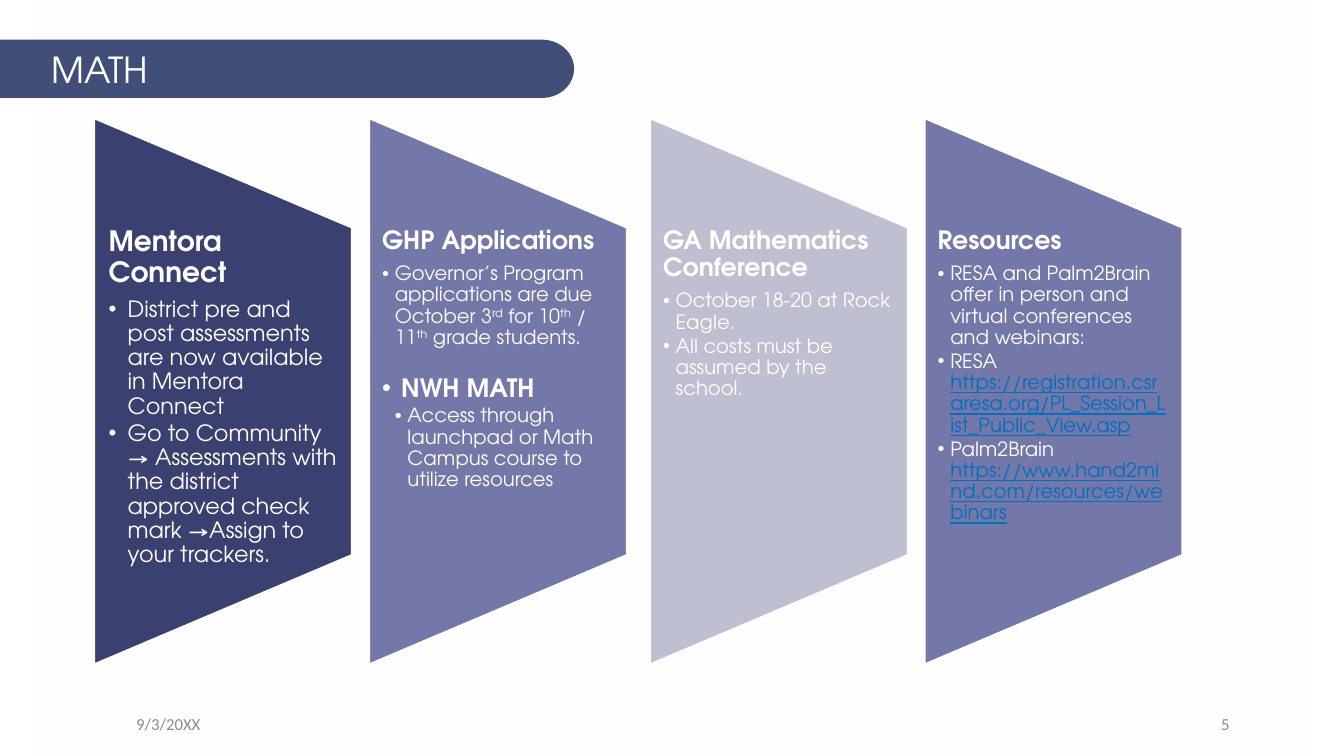
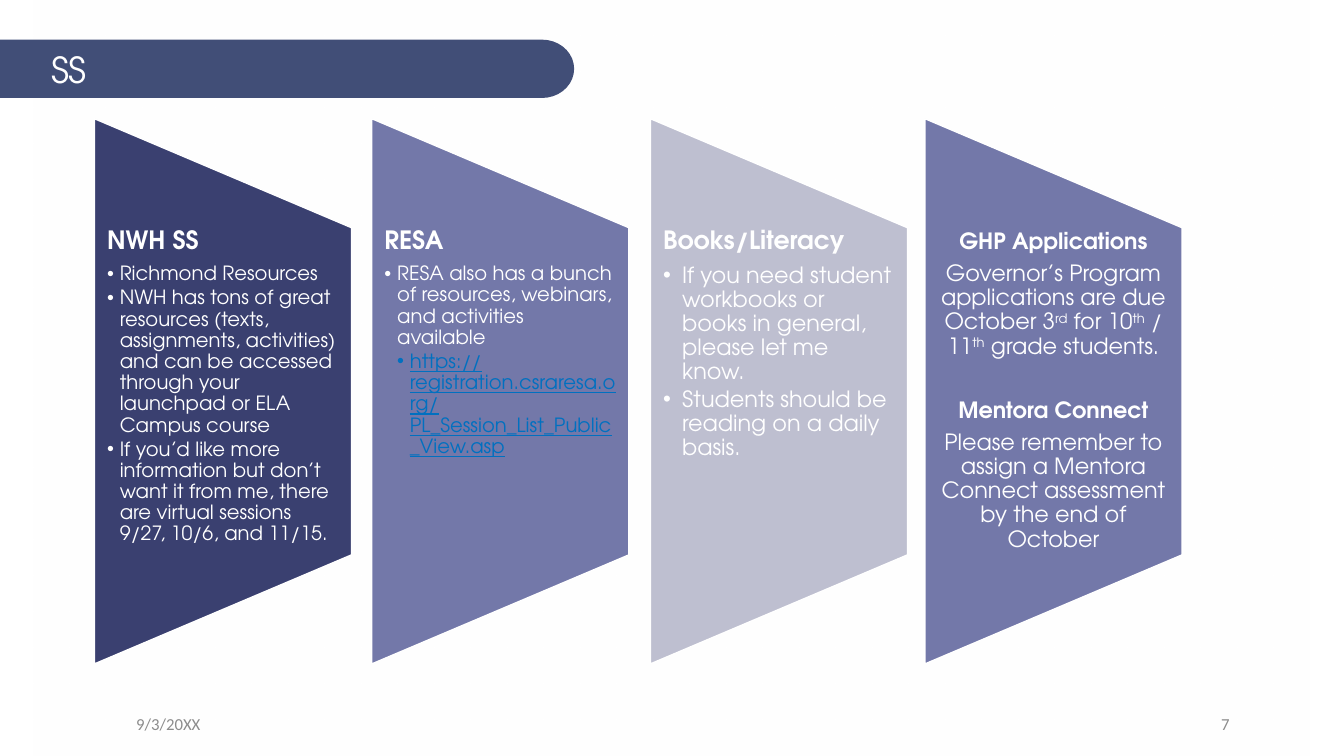
import math

from lxml import etree
from pptx import Presentation
from pptx import util as u
from pptx.dml.color import RGBColor
from pptx.enum import shapes, text
from pptx.oxml import ns

WHITE = RGBColor(0xFF, 0xFF, 0xFF)
BAND = RGBColor(0x41, 0x4E, 0x77)
NAVY = RGBColor(0x3A, 0x40, 0x70)
VIOLET = RGBColor(0x73, 0x78, 0xA9)
LILAC = RGBColor(0xBE, 0xBF, 0xD0)
LINK = RGBColor(0x00, 0x70, 0xC0)
GREY = RGBColor(0x8C, 0x8C, 0x8C)
FONT = "TeX Gyre Adventor"

PANEL_FILLS = [NAVY, VIOLET, LILAC, VIOLET]
PANEL_W, PANEL_H, PANEL_MID = 6.48, 13.74, 9.86
TEXT_TOP, TEXT_H = 5.74, 8.23
BAND_TOP, BAND_H, BAND_STRAIGHT, BAND_CAP = 1, 1.47, 13.66, 0.81

PANEL = dict(spacing=0.9)
HEAD = dict(PANEL, size=18, bold=True, after=6.3)
BIG_HEAD = dict(HEAD, size=20, after=7)
BULLET = dict(PANEL, size=14, after=2.1, indent=0.32, hang=0.32)
SUB_BULLET = dict(BULLET, indent=0.64)
BIG_BULLET = dict(PANEL, size=16, after=2.4, indent=0.48, hang=0.48)
BULLET_HEAD = dict(BIG_BULLET, size=18, bold=True, before=17)
CENTRED = dict(PANEL, size=16, after=5.6, align=text.PP_ALIGN.CENTER)
CENTRED_HEAD = dict(CENTRED, bold=True)

GHP_DATES = ("Governor’s Program applications are due October 3|rd| for 10|th| / 11|th"
             "| grade students.")
RESA_URL = "https://registration.csraresa.org/PL_Session_List_Public_View.asp"

SLIDES = [
    ("MATH", "5", [
        (2.38, 0.36, [
            ("Mentora Connect", BIG_HEAD),
            ("District pre and post assessments are now available in Mentora Connect", BIG_BULLET),
            ("Go to Community → Assessments with the district approved check mark "
             "→Assign to your trackers.", BIG_BULLET),
        ]),
        (9.31, 0.32, [
            ("GHP Applications", HEAD),
            (GHP_DATES, BULLET),
            ("NWH MATH", BULLET_HEAD),
            ("Access through launchpad or Math Campus course to utilize resources", SUB_BULLET),
        ]),
        (16.39, 0.32, [
            ("GA Mathematics Conference", HEAD),
            ("October 18-20 at Rock Eagle.", BULLET),
            ("All costs must be assumed by the school.", BULLET),
        ]),
        (23.31, 0.32, [
            ("Resources", HEAD),
            ("RESA and Palm2Brain offer in person and virtual conferences and webinars:", BULLET),
            ("RESA |" + RESA_URL, BULLET),
            ("Palm2Brain |https://www.hand2mind.com/resources/webinars", BULLET),
        ]),
    ]),
    ("SS", "7", [
        (2.38, 0.32, [
            ("NWH SS", HEAD),
            ("Richmond Resources", BULLET),
            ("NWH has tons of great resources (texts, assignments, activities) and can be "
             "accessed through your launchpad or ELA Campus course", BULLET),
            ("If you’d like more information but don’t want it from me, there are virtual "
             "sessions 9/27, 10/6, and 11/15.", BULLET),
        ]),
        (9.37, 0.32, [
            ("RESA", HEAD),
            ("RESA also has a bunch of resources, webinars, and activities available", BULLET),
            (RESA_URL, SUB_BULLET),
        ]),
        (16.39, 0.32, [
            ("Books/Literacy", HEAD),
            ("If you need student workbooks or books in general, please let me know.", BIG_BULLET),
            ("Students should be reading on a daily basis.", BIG_BULLET),
        ]),
        (23.31, 0.28, [
            ("GHP Applications", CENTRED_HEAD),
            (GHP_DATES, CENTRED),
            ("Mentora Connect", dict(CENTRED_HEAD, before=23)),
            ("Please remember to assign a Mentora Connect assessment by the end of October",
             CENTRED),
        ]),
    ]),
]


def add_box(s, x, y, w, h, inset_x=0, inset_y=0, anchor=text.MSO_ANCHOR.TOP):
    tf = s.shapes.add_textbox(u.Cm(x), u.Cm(y), u.Cm(w), u.Cm(h)).text_frame
    tf.word_wrap = True
    tf.vertical_anchor = anchor
    tf.margin_left = tf.margin_right = u.Cm(inset_x)
    tf.margin_top = tf.margin_bottom = u.Cm(inset_y)
    return tf


def write(tf, content, size=12, bold=False, color=WHITE, font=FONT, align=None,
          spacing=None, before=0, after=0, indent=0, hang=0):
    p = tf.paragraphs[0]
    if p.runs:
        p = tf.add_paragraph()
    p.alignment = align
    p.line_spacing = spacing
    p.space_before, p.space_after = u.Pt(before), u.Pt(after)
    if hang:
        pPr = p._p.get_or_add_pPr()
        pPr.set("marL", str(u.Cm(indent)))
        pPr.set("indent", str(-u.Cm(hang)))
        etree.SubElement(pPr, ns.qn("a:buFont")).set("typeface", "Arial")
        etree.SubElement(pPr, ns.qn("a:buChar")).set("char", "•")
    for piece in content.split("|"):
        r = p.add_run()
        r.text = piece
        r.font.size, r.font.bold, r.font.name = u.Pt(size), bold, font
        is_link = piece.startswith("https://")
        r.font.color.rgb = LINK if is_link else color
        if is_link:
            r.font.underline = True
        if piece in ("rd", "th"):
            r._r.get_or_add_rPr().set("baseline", "30000")


prs = Presentation()
prs.slide_width, prs.slide_height = u.Cm(33.87), u.Cm(19.05)

for title, number, panels in SLIDES:
    s = prs.slides.add_slide(prs.slide_layouts[6])

    sp = s.shapes.add_shape(shapes.MSO_SHAPE.RECTANGLE, u.Cm(0.84), 0, u.Cm(32.16), u.Cm(19.05))
    sp.shadow.inherit = False
    sp.line.fill.background()
    sp.fill.gradient()
    sp.fill.gradient_angle = 230
    for stop in sp.fill.gradient_stops:
        stop.color.rgb = WHITE
    last_color = sp._element.spPr.findall(".//" + ns.qn("a:srgbClr"))[-1]
    etree.SubElement(last_color, ns.qn("a:alpha")).set("val", "55000")

    for x, align, w, label in [(3.1, text.PP_ALIGN.LEFT, 7.62, "9/3/20XX"),
                               (28.25, text.PP_ALIGN.RIGHT, 3.07, number)]:
        tf = add_box(s, x, 17.78, w, 0.89, 0.33, 0.18, text.MSO_ANCHOR.BOTTOM)
        write(tf, label, color=GREY, font="Calibri", align=align)

    for (x, inset, paragraphs), fill in zip(panels, PANEL_FILLS):
        sp = s.shapes.add_shape(
            shapes.MSO_SHAPE.FLOWCHART_MANUAL_OPERATION,
            u.Cm(x + (PANEL_W - PANEL_H) / 2), u.Cm(PANEL_MID - PANEL_W / 2),
            u.Cm(PANEL_H), u.Cm(PANEL_W))
        sp.rotation = 270
        sp.shadow.inherit = False
        sp.fill.solid()
        sp.fill.fore_color.rgb = fill
        sp.line.color.rgb = WHITE
        sp.line.width = u.Pt(1)
        centred = paragraphs[0][1] is CENTRED_HEAD
        anchor = text.MSO_ANCHOR.MIDDLE if centred else text.MSO_ANCHOR.TOP
        tf = add_box(s, x, TEXT_TOP, PANEL_W, TEXT_H, inset, anchor=anchor)
        for content, style in paragraphs:
            write(tf, content, **style)

    radius = BAND_H / 2
    cap = [(BAND_STRAIGHT + BAND_CAP * math.cos(math.radians(a)),
            BAND_TOP + radius + radius * math.sin(math.radians(a)))
           for a in range(90, -91, -10)]
    outline = [(0, BAND_TOP + BAND_H)] + cap
    fb = s.shapes.build_freeform(0, u.Cm(BAND_TOP))
    fb.add_line_segments([(u.Cm(x), u.Cm(y)) for x, y in outline], close=True)
    sp = fb.convert_to_shape()
    sp.shadow.inherit = False
    sp.fill.solid()
    sp.fill.fore_color.rgb = BAND
    sp.line.fill.background()

    write(add_box(s, 1.29, 1.19, 11.9, 1.12), title, size=25.6)

prs.save("out.pptx")
